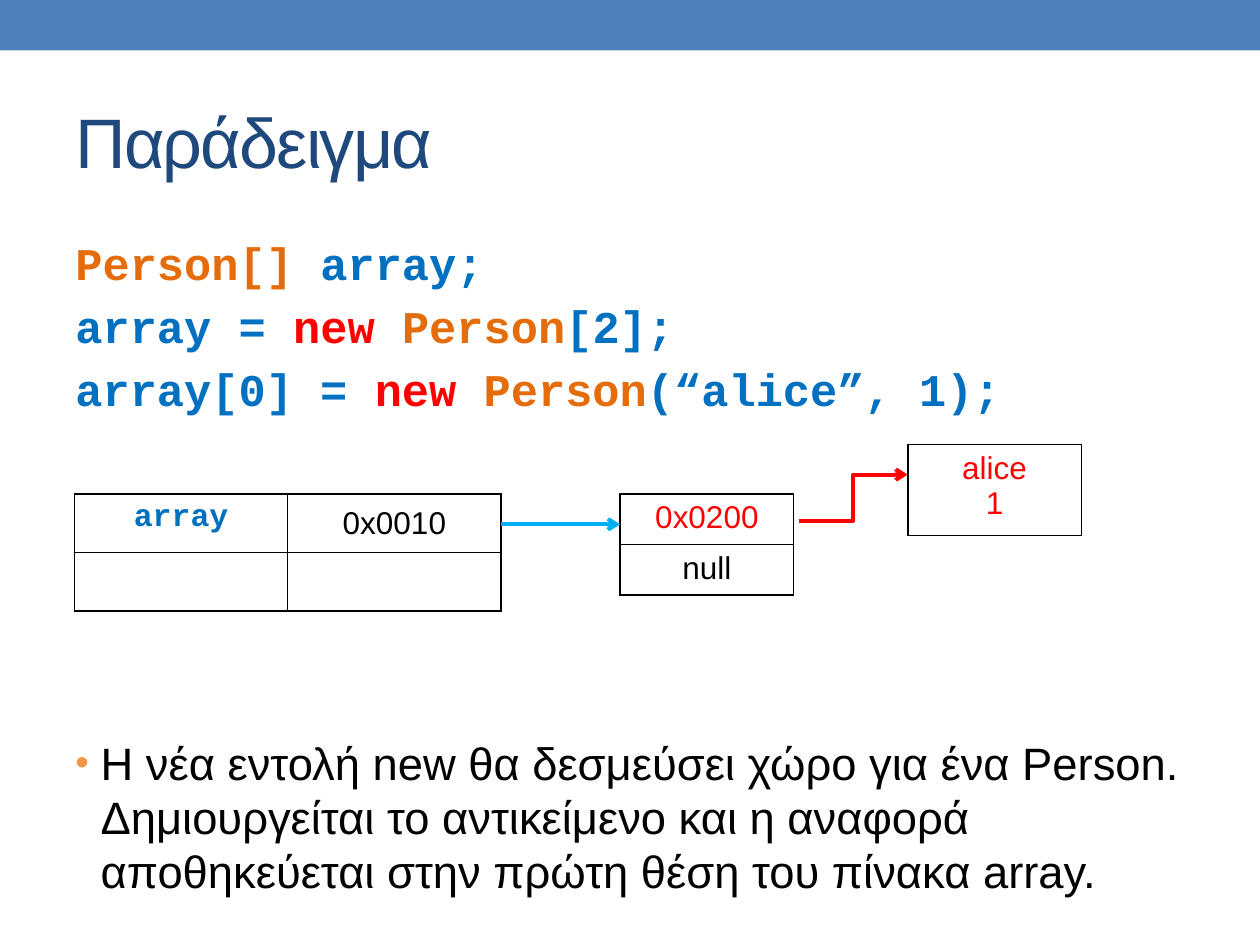
from lxml.etree import SubElement
from pptx import Presentation
from pptx.dml.color import RGBColor
from pptx.enum.shapes import MSO_CONNECTOR, MSO_SHAPE
from pptx.enum.text import MSO_ANCHOR, PP_ALIGN
from pptx.oxml.ns import qn
from pptx.util import Cm, Pt

COLORS = {
    "bar": "4F81BD", "title": "1F497D", "type": "E46C0A", "code": "0070C0",
    "key": "FF0000", "pointer": "00B0F0", "bullet": "F79646", "ink": "000000",
}
TITLE = {"name": "Arial", "size": Pt(40), "bold": False}
CODE = {"name": "Courier New", "size": Pt(25.9), "bold": True}
BODY = {"name": "Arial", "size": Pt(25.9), "bold": False}
CELL = {"name": "Arial", "size": Pt(18), "bold": False}
CELL_CODE = {"name": "Courier New", "size": Pt(18), "bold": True}
CENTERED = {"alignment": PP_ALIGN.CENTER}


def add_xml(parent, tag, **attributes):
    return SubElement(parent, qn(tag), attributes)


def write(frame, lines, font_format, para_format):
    """Fill a text frame; each line is a list of (text, color name) spans."""
    for number, line in enumerate(lines):
        para = frame.add_paragraph() if number else frame.paragraphs[0]
        for name, value in para_format.items():
            setattr(para, name, value)
        for text, color in line:
            span = para.add_run()
            span.text = text
            for name, value in font_format.items():
                setattr(span.font, name, value)
            span.font.color.rgb = RGBColor.from_string(COLORS[color])


deck = Presentation()
deck.slide_width, deck.slide_height = Cm(25.4), Cm(19.05)
page = deck.slides.add_slide(deck.slide_layouts[6])

# Top bar
bar = page.shapes.add_shape(MSO_SHAPE.RECTANGLE, 0, 0, deck.slide_width, Cm(1.02))
bar.shadow.inherit = False
bar.fill.solid()
bar.fill.fore_color.rgb = RGBColor.from_string(COLORS["bar"])
bar.line.fill.background()

# Title, code and explanation: top, height, anchor, lines, formats
title_lines = [[("Παράδειγμα", "title")]]
code_lines = [
    [("Person[] ", "type"), ("array;", "code")],
    [("array = ", "code"), ("new ", "key"), ("Person", "type"), ("[2];", "code")],
    [("array[0] = ", "code"), ("new ", "key"), ("Person", "type"),
     ("(“alice”, 1);", "code")],
]
note_lines = [[(
    "H νέα εντολή new θα δεσμεύσει χώρο για ένα Person. "
    "Δημιουργείται το αντικείμενο και η αναφορά "
    "αποθηκεύεται στην πρώτη θέση του πίνακα array.", "ink")]]
text_boxes = [
    (1.47, 2.74, MSO_ANCHOR.MIDDLE, title_lines, TITLE, {}),
    (4.45, 4.2, MSO_ANCHOR.TOP, code_lines, CODE, {"line_spacing": Pt(36)}),
    (14.7, 3.6, MSO_ANCHOR.TOP, note_lines, BODY, {"line_spacing": Pt(30.9)}),
]
frames = []
for top, height, anchor, lines, font_format, para_format in text_boxes:
    box = page.shapes.add_textbox(Cm(1.27), Cm(top), Cm(22.86), Cm(height))
    box.text_frame.word_wrap = True
    box.text_frame.vertical_anchor = anchor
    write(box.text_frame, lines, font_format, para_format)
    frames.append(box.text_frame)

# Tight title letters and the bullet of the explanation
title_frame, code_frame, note_frame = frames
title_frame.paragraphs[0].runs[0].font._element.set("spc", "-100")
bullet = note_frame.paragraphs[0]._p.get_or_add_pPr()
bullet.set("marL", str(Cm(0.51)))
bullet.set("indent", str(-Cm(0.51)))
add_xml(add_xml(bullet, "a:buClr"), "a:srgbClr", val=COLORS["bullet"])
add_xml(bullet, "a:buSzPct", val="85000")
add_xml(bullet, "a:buFont", typeface="Arial")
add_xml(bullet, "a:buChar", char="•")

# Memory tables: left, top, column width, row height, rows of cells
# A cell is its lines, font format and anchor; None is an empty cell
top_anchor, middle = MSO_ANCHOR.TOP, MSO_ANCHOR.MIDDLE
tables = [
    (1.5, 9.96, 4.3, 1.18, [
        [([[("array", "code")]], CELL_CODE, top_anchor),
         ([[("0x0010", "ink")]], CELL, middle)],
        [None, None]]),
    (12.5, 9.96, 3.5, 0.97, [
        [([[("0x0200", "key")]], CELL, top_anchor)],
        [([[("null", "ink")]], CELL, top_anchor)]]),
    (18.3, 8.96, 3.5, 1.83, [
        [([[("alice", "key")], [("1", "key")]], CELL, top_anchor)]]),
]
for left, top, width, height, rows in tables:
    columns = len(rows[0])
    table = page.shapes.add_table(
        len(rows), columns, Cm(left), Cm(top),
        Cm(width * columns), Cm(height * len(rows))).table
    table.first_row = table.horz_banding = False
    for row_number, row in enumerate(rows):
        for column_number, content in enumerate(row):
            cell = table.cell(row_number, column_number)
            if content:
                lines, font_format, anchor = content
                write(cell.text_frame, lines, font_format, CENTERED)
                cell.vertical_anchor = anchor
            borders = cell._tc.get_or_add_tcPr()
            for side in ("a:lnL", "a:lnR", "a:lnT", "a:lnB"):
                border = add_xml(borders, side, w=str(Pt(1)))
                add_xml(add_xml(border, "a:solidFill"), "a:srgbClr", val=COLORS["ink"])
            cell.fill.background()

# Reference arrows
arrows = [
    (MSO_CONNECTOR.STRAIGHT, 10.1, 10.57, 12.5, 10.57, "pointer"),
    (MSO_CONNECTOR.ELBOW, 16.1, 10.5, 18.3, 9.57, "key"),
]
for kind, start_x, start_y, end_x, end_y, color in arrows:
    arrow = page.shapes.add_connector(
        kind, Cm(start_x), Cm(start_y), Cm(end_x), Cm(end_y))
    arrow.line.width = Pt(2.25)
    arrow.line.color.rgb = RGBColor.from_string(COLORS[color])
    add_xml(arrow.line._get_or_add_ln(), "a:tailEnd", type="arrow")
    add_xml(arrow._element.spPr, "a:effectLst")

deck.save("out.pptx")
